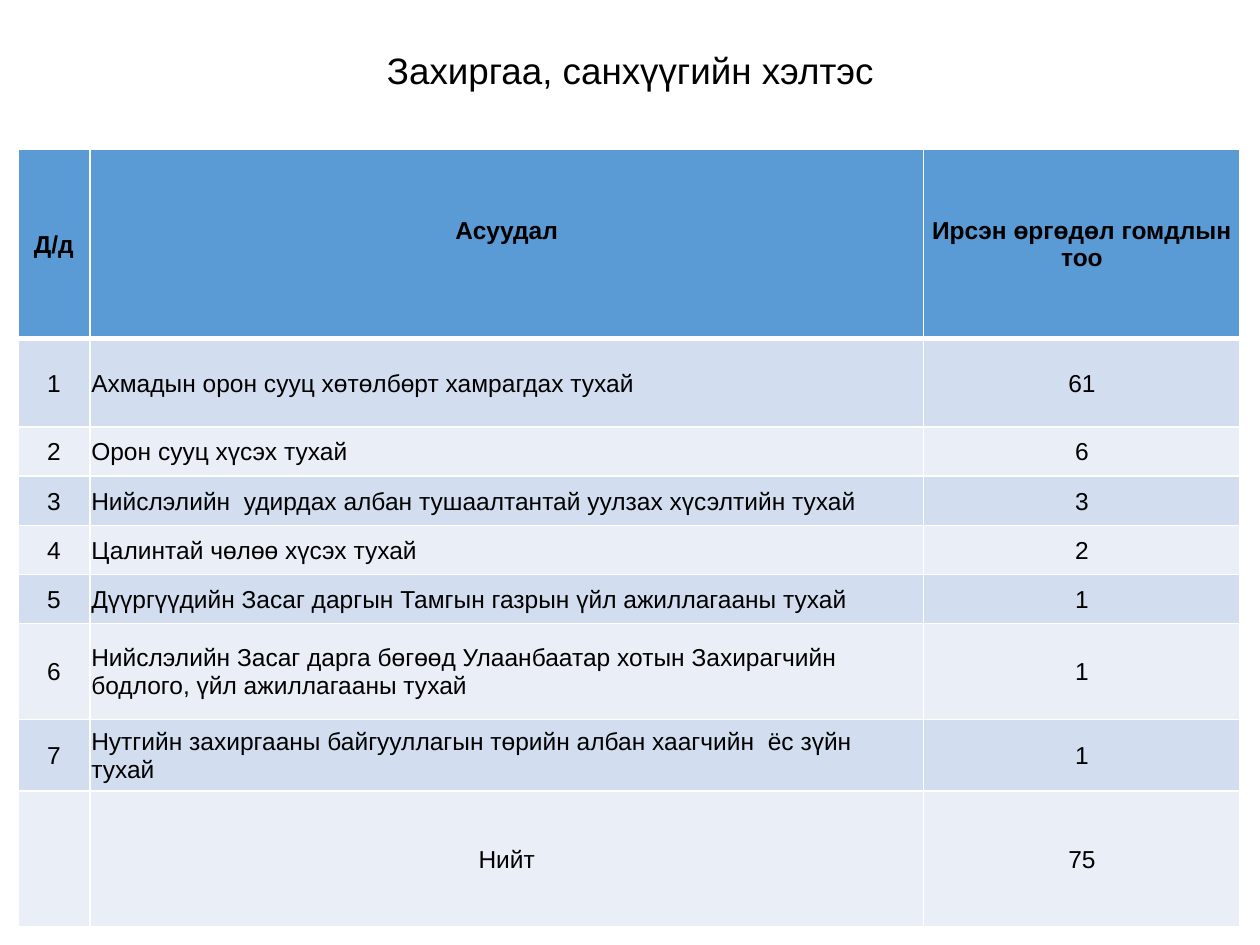
import pptx
import pptx.util
import pptx.dml.color
import pptx.enum.text
import pptx.oxml
import pptx.oxml.ns

Cm = pptx.util.Cm
Pt = pptx.util.Pt
RGBColor = pptx.dml.color.RGBColor
ALIGN = pptx.enum.text.PP_ALIGN
MIDDLE = pptx.enum.text.MSO_ANCHOR.MIDDLE

BLACK = RGBColor(0x00, 0x00, 0x00)
WHITE = RGBColor(0xFF, 0xFF, 0xFF)
HEADER = RGBColor(0x5B, 0x9B, 0xD5)
BANDS = (RGBColor(0xEA, 0xEF, 0xF7), RGBColor(0xD2, 0xDE, 0xEF))

COLUMN_WIDTHS = (1.45, 16.81, 6.38)
ROW_HEIGHTS = (3.83, 1.78, 0.99, 0.99, 0.99, 0.99, 1.93, 1.45, 2.74)

HEADINGS = ("Д/д", "Асуудал", "Ирсэн өргөдөл гомдлын тоо")
ISSUES = (
    ("Ахмадын орон сууц хөтөлбөрт хамрагдах тухай", 61),
    ("Орон сууц хүсэх тухай", 6),
    ("Нийслэлийн  удирдах албан тушаалтантай уулзах хүсэлтийн тухай", 3),
    ("Цалинтай чөлөө хүсэх тухай", 2),
    ("Дүүргүүдийн Засаг даргын Тамгын газрын үйл ажиллагааны тухай", 1),
    ("Нийслэлийн Засаг дарга бөгөөд Улаанбаатар хотын Захирагчийн "
     "бодлого, үйл ажиллагааны тухай", 1),
    ("Нутгийн захиргааны байгууллагын төрийн албан хаагчийн  ёс зүйн тухай", 1),
)


class SlideBuilder:
    font = "Arial"

    def __init__(self, prs):
        self.slide = prs.slides.add_slide(prs.slide_layouts[5])

    def text(self, tf, text, size, align, bold=False):
        tf.text = text
        p = tf.paragraphs[0]
        p.alignment = align
        for r in p.runs:
            r.font.name = self.font
            r.font.size = Pt(size)
            r.font.bold = bold
            r.font.color.rgb = BLACK
        return p

    def title(self, text, left, top, width, height):
        sp = self.slide.shapes.title
        sp.left, sp.top, sp.width, sp.height = map(Cm, (left, top, width, height))
        tf = sp.text_frame
        tf.vertical_anchor = MIDDLE
        tf.margin_left = Cm(0.64)
        self.text(tf, text, 21, ALIGN.CENTER).line_spacing = 0.9

    def border(self, cell, side, width):
        tcPr = cell._tc.get_or_add_tcPr()
        tcPr.append(pptx.oxml.parse_xml(
            f'<a:ln{side} {pptx.oxml.ns.nsdecls("a")} w="{Pt(width)}"><a:solidFill>'
            f'<a:srgbClr val="{WHITE}"/></a:solidFill></a:ln{side}>'))

    def cell(self, cell, text, row, align):
        cell.vertical_anchor = MIDDLE
        cell.margin_left = cell.margin_right = cell.margin_top = Cm(0.03)
        cell.margin_bottom = 0
        thick = {0: "B", 1: "T"}.get(row)
        for side in "LRTB":
            self.border(cell, side, 3 if side == thick else 1)
        cell.fill.solid()
        cell.fill.fore_color.rgb = BANDS[row % 2] if row else HEADER
        if text:
            self.text(cell.text_frame, text, 14, align, bold=row == 0)

    def table(self, rows, left, top):
        frame = self.slide.shapes.add_table(
            len(rows), len(COLUMN_WIDTHS), Cm(left), Cm(top),
            Cm(sum(COLUMN_WIDTHS)), Cm(sum(ROW_HEIGHTS)))
        table = frame.table
        for column, width in zip(table.columns, COLUMN_WIDTHS):
            column.width = Cm(width)
        for i, (values, height) in enumerate(zip(rows, ROW_HEIGHTS)):
            table.rows[i].height = Cm(height)
            for j, value in enumerate(values):
                is_issue = j == 1 and 0 < i < len(rows) - 1
                self.cell(table.cell(i, j), str(value), i,
                          ALIGN.LEFT if is_issue else ALIGN.CENTER)
        return table


def main():
    prs = pptx.Presentation()
    prs.slide_width, prs.slide_height = Cm(25.4), Cm(19.05)
    s = SlideBuilder(prs)

    # Title
    s.title("Захиргаа, санхүүгийн хэлтэс", 0.36, 0.48, 24.31, 1.98)

    # Complaints by issue, with the total in the last row
    rows = [HEADINGS]
    rows += [(n, issue, count) for n, (issue, count) in enumerate(ISSUES, 1)]
    rows.append(("", "Нийт", sum(count for _, count in ISSUES)))
    table = s.table(rows, 0.36, 3)

    # The issue heading sits one half line above the middle
    table.cell(0, 1).margin_bottom = Cm(0.56)

    prs.save("out.pptx")


if __name__ == "__main__":
    main()
